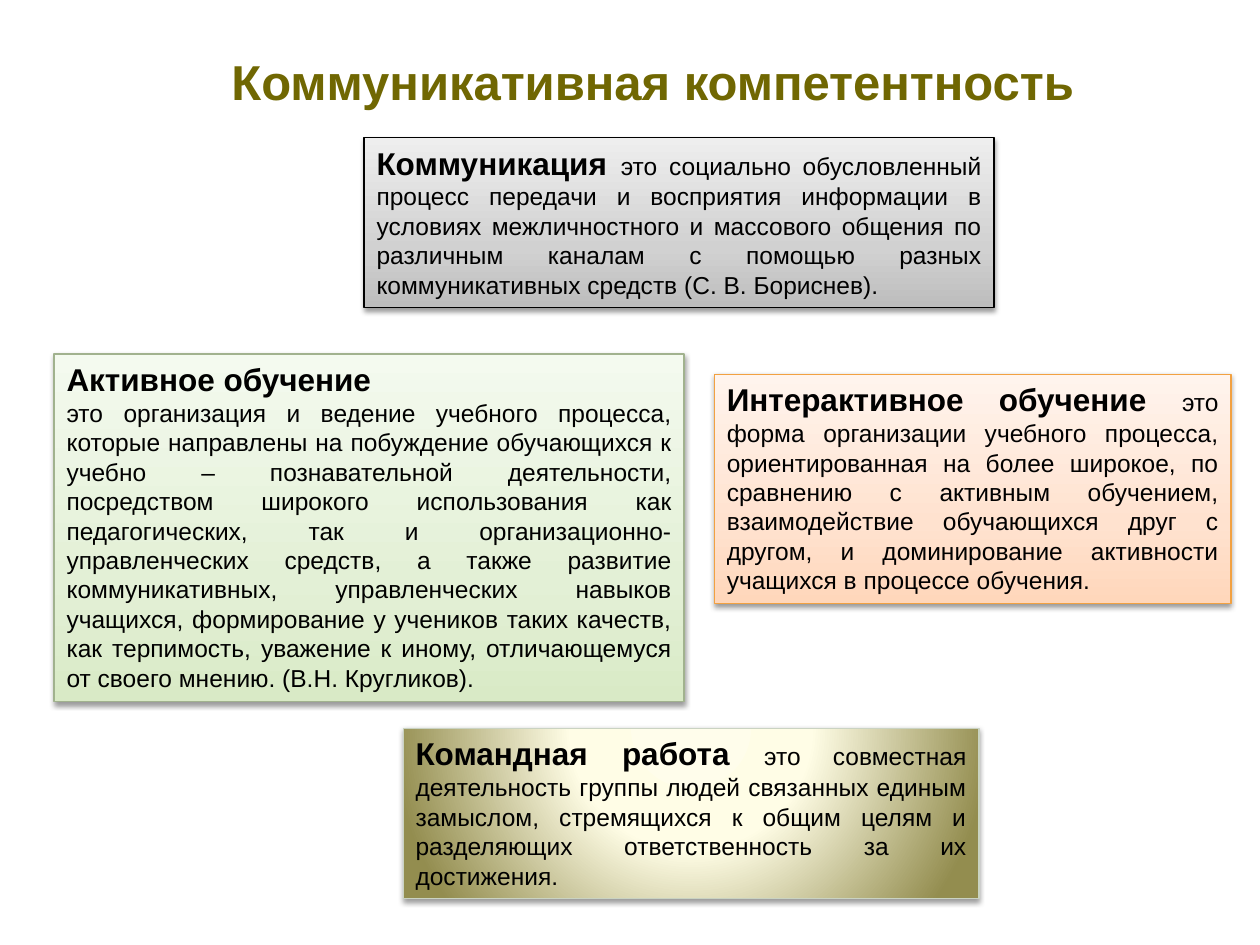
from pptx import Presentation
from pptx.dml.color import RGBColor
from pptx.enum.shapes import MSO_SHAPE
from pptx.enum.text import MSO_ANCHOR, PP_ALIGN
from pptx.oxml import parse_xml
from pptx.oxml.ns import nsdecls, qn
from pptx.util import Inches, Pt

UPWARD = '<a:lin ang="16200000" scaled="1"/>'
RADIAL = ('<a:path path="circle"><a:fillToRect l="50000" t="-80000" '
          'r="50000" b="180000"/></a:path>')

# box, gradient stops, gradient direction, line colour, paragraphs of (term, definition)
CARDS = [
    ((0.43, 2.81, 5, 2.76), [(0, "D9EAC6"), (35, "E3F0D6"), (100, "F4FAEF")], UPWARD, "A1B28E",
     [("Активное обучение", ""),
      ("", "это организация и ведение учебного процесса, которые направлены на побуждение "
           "обучающихся к учебно – познавательной деятельности, посредством широкого "
           "использования как педагогических, так и организационно-управленческих средств, "
           "а также развитие коммуникативных, управленческих навыков учащихся, формирование "
           "у учеников таких качеств, как терпимость, уважение к иному, отличающемуся от "
           "своего мнению. (В.Н. Кругликов).")]),
    ((3.2, 5.78, 4.57, 1.35), [(0, "FFFDEB"), (40, "FFFDE6"), (100, "938D4F")], RADIAL, "CAD3C2",
     [("Командная работа ",
       "это совместная деятельность группы людей связанных единым замыслом, стремящихся к "
       "общим целям и разделяющих ответственность за их достижения.")]),
    ((2.89, 1.09, 5, 1.35), [(0, "BDBDBD"), (35, "D1D1D1"), (100, "EEEEEE")], UPWARD, "000000",
     [("Коммуникация ",
       "это социально обусловленный процесс передачи и восприятия информации в условиях "
       "межличностного и массового общения по различным каналам с помощью разных "
       "коммуникативных средств (С. В. Бориснев).")]),
    ((5.67, 2.97, 4.1, 1.82), [(0, "FFD7BB"), (35, "FFE2CF"), (100, "FFF4ED")], UPWARD, "F2A141",
     [("Интерактивное обучение ",
       "это форма организации учебного процесса, ориентированная на более широкое, по "
       "сравнению с активным обучением, взаимодействие обучающихся друг с другом, и "
       "доминирование активности учащихся в процессе обучения.")]),
]


def rgb(value):
    return RGBColor.from_string(value)


def set_gradient(sp, stops, direction):
    """Fill a shape, whose line is already set, with a gradient."""
    gs = "".join(f'<a:gs pos="{pos * 1000}"><a:srgbClr val="{color}"/></a:gs>'
                 for pos, color in stops)
    sp.element.spPr.find(qn("a:ln")).addprevious(parse_xml(
        f'<a:gradFill {nsdecls("a")} rotWithShape="1"><a:gsLst>{gs}</a:gsLst>'
        f'{direction}</a:gradFill>'))


def set_shadow(sp):
    sp.shadow.inherit = False
    sp.element.spPr.find(qn("a:effectLst")).append(parse_xml(
        f'<a:outerShdw {nsdecls("a")} blurRad="{Pt(3.1)}" dist="{Pt(1.6)}" dir="5400000" '
        'rotWithShape="0"><a:srgbClr val="000000"><a:alpha val="38000"/></a:srgbClr>'
        '</a:outerShdw>'))


def add_title(slide, box, text):
    tf = slide.shapes.add_textbox(*map(Inches, box)).text_frame
    tf.word_wrap = True
    p = tf.paragraphs[0]
    p.text = text
    p.alignment = PP_ALIGN.CENTER
    p.font.name = "Arial"
    p.font.size = Pt(28)
    p.font.bold = True
    p.font.color.rgb = rgb("706702")


def add_card(slide, box, stops, direction, line, paragraphs):
    sp = slide.shapes.add_shape(MSO_SHAPE.RECTANGLE, *map(Inches, box))
    sp.line.color.rgb = rgb(line)
    sp.line.width = Pt(0.75)
    set_gradient(sp, stops, direction)
    set_shadow(sp)
    tf = sp.text_frame
    tf.word_wrap = True
    tf.vertical_anchor = MSO_ANCHOR.TOP
    for i, (term, definition) in enumerate(paragraphs):
        p = tf.add_paragraph() if i else tf.paragraphs[0]
        p.alignment = PP_ALIGN.JUSTIFY
        p.font.name = "Arial"
        p.font.color.rgb = rgb("000000")
        for text, size, bold in ((term, 18, True), (definition, 14, False)):
            if text:
                r = p.add_run()
                r.text = text
                r.font.size = Pt(size)
                r.font.bold = bold


def main():
    prs = Presentation()
    prs.slide_width, prs.slide_height = Inches(10), Inches(7.5)
    slide = prs.slides.add_slide(prs.slide_layouts[6])
    add_title(slide, (0.27, 0.36, 9.82, 0.57), "Коммуникативная компетентность")
    for card in CARDS:
        add_card(slide, *card)
    prs.save("out.pptx")


if __name__ == "__main__":
    main()
